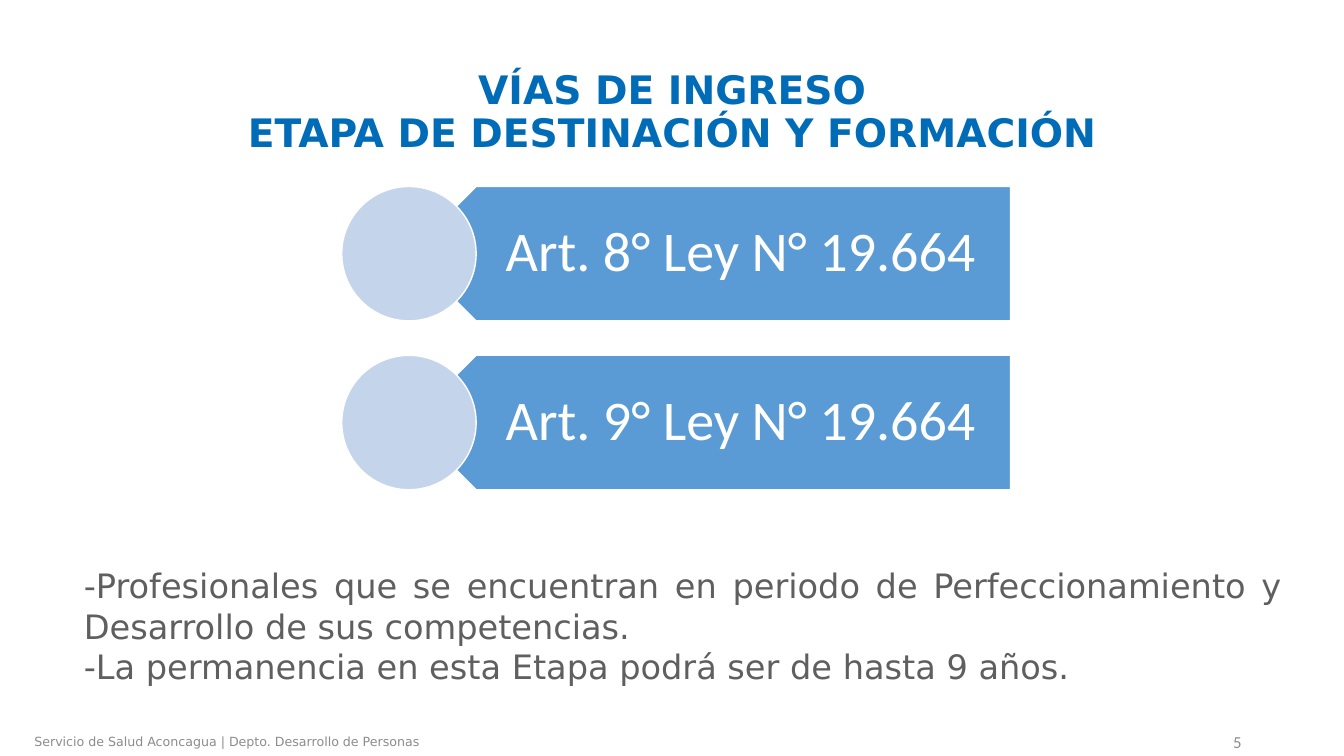
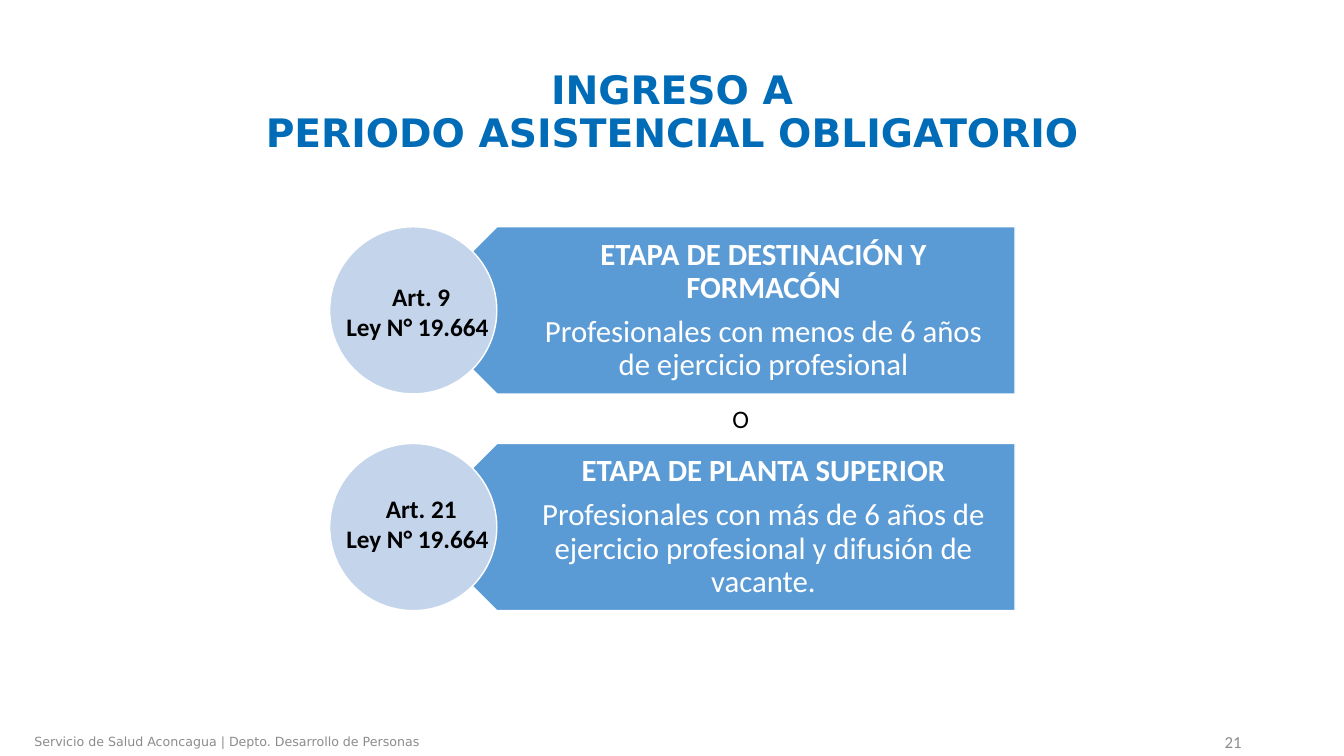
from pptx import Presentation
from pptx import util as u
from pptx.dml.color import RGBColor
from pptx.enum import shapes, text

# Colours and fonts
TITLE_BLUE = RGBColor(0x00, 0x6C, 0xB7)
PLATE_BLUE = RGBColor(0x5B, 0x9B, 0xD5)
CIRCLE_BLUE = RGBColor(0xC4, 0xD5, 0xEB)
FOOTER_GREY = RGBColor(0x8C, 0x8C, 0x8C)
BODY_GREY = RGBColor(0x5F, 0x5F, 0x5F)
WHITE = RGBColor(0xFF, 0xFF, 0xFF)
BLACK = RGBColor(0x00, 0x00, 0x00)
SANS, CALIBRI = "DejaVu Sans", "Calibri"

# Grid: 160 columns by 90 rows, square cells
CELL = u.Inches(1) / 12
COLS, ROWS = 160, 90
FOOTER = "Servicio de Salud Aconcagua | Depto. Desarrollo de Personas"
LEFT, CENTER, RIGHT, JUSTIFY = (text.PP_ALIGN.LEFT, text.PP_ALIGN.CENTER,
                                text.PP_ALIGN.RIGHT, text.PP_ALIGN.JUSTIFY)
MIDDLE, TOP = text.MSO_ANCHOR.MIDDLE, text.MSO_ANCHOR.TOP


def grid(*cells):
    return [u.Emu(round(c * CELL)) for c in cells]


class Deck:
    def __init__(self):
        self.prs = Presentation()
        self.prs.slide_width, self.prs.slide_height = grid(COLS, ROWS)
        self.s = None

    def slide(self, title, number):
        """Start a slide with its title and footer."""
        self.s = self.prs.slides.add_slide(self.prs.slide_layouts[5])
        sp = self.s.shapes.title
        sp.left, sp.top, sp.width, sp.height = grid(11, 4.8, 138, 17.4)
        self.fill_text(sp.text_frame, [title], 28, SANS, TITLE_BLUE,
                       bold=True, anchor=MIDDLE, spacing=0.9)
        self.label((0, 86.5, 54, 3.5), [FOOTER], 9, SANS, FOOTER_GREY, anchor=MIDDLE)
        self.label((113, 86.5, 36, 3.5), [number], 12, CALIBRI, FOOTER_GREY,
                   align=RIGHT, anchor=MIDDLE)

    def fill_text(self, tf, lines, size, font, color, bold=False, align=CENTER,
                  anchor=TOP, spacing=None, gap=0):
        tf.word_wrap = True
        tf.auto_size = text.MSO_AUTO_SIZE.NONE
        tf.vertical_anchor = anchor
        for i, line in enumerate(lines):
            p = tf.add_paragraph() if i else tf.paragraphs[0]
            p.text = line
            p.alignment = align
            p.line_spacing = spacing
            p.space_before = u.Pt(gap if i else 0)
            p.font.size, p.font.name, p.font.bold = u.Pt(size), font, bold
            p.font.color.rgb = color

    def label(self, box, lines, size, font, color, **style):
        tf = self.s.shapes.add_textbox(*grid(*box)).text_frame
        self.fill_text(tf, lines, size, font, color, **style)
        return tf

    def shape(self, kind, box, fill):
        sp = self.s.shapes.add_shape(kind, *grid(*box))
        sp.shadow.inherit = False
        sp.fill.solid()
        sp.fill.fore_color.rgb = fill
        sp.line.color.rgb = WHITE
        sp.line.width = u.Pt(1)
        return sp

    def plate(self, x, y, d, lines, size, pad_right, pad_y):
        """Left-pointing plate with a circle of diameter d over its tip."""
        width = 71.64
        plate_x = x + d / 2
        sp = self.shape(shapes.MSO_SHAPE.PENTAGON, (plate_x, y, width, d), PLATE_BLUE)
        sp.rotation = 180
        tf = self.label((plate_x + d / 4, y, width - d / 4, d), lines, size,
                        CALIBRI, WHITE, anchor=MIDDLE, spacing=0.9, gap=0.35 * size)
        tf.margin_left, tf.margin_right = grid(0.44 * d, pad_right)
        tf.margin_top = tf.margin_bottom = grid(pad_y)[0]
        self.shape(shapes.MSO_SHAPE.OVAL, (x, y, d, d), CIRCLE_BLUE)
        return tf


def entry_routes(deck):
    deck.slide("VÍAS DE INGRESO\vETAPA DE DESTINACIÓN Y FORMACIÓN", "5")
    for i, article in enumerate(("8°", "9°")):
        deck.plate(40.68, 22.2 + 20.1 * i, 16, [f"Art. {article} Ley N° 19.664"],
                   40, pad_right=3.7, pad_y=2)
    deck.label((8.8, 66.7, 145, 15.7), [
        "-Profesionales que se encuentran en periodo de Perfeccionamiento y "
        "Desarrollo de sus competencias.",
        "-La permanencia en esta Etapa podrá ser de hasta 9 años.",
    ], 24, SANS, BODY_GREY, align=JUSTIFY)


def mandatory_period(deck):
    deck.slide("INGRESO A\vPERIODO ASISTENCIAL OBLIGATORIO", "21")
    x, top, pitch = 39.25, 27, 25.8
    stages = [
        ("Art. 9", 5.9, "ETAPA DE DESTINACIÓN Y FORMACÓN",
         "Profesionales con menos de 6 años de ejercicio profesional"),
        ("Art. 21", 5.3, "ETAPA DE PLANTA SUPERIOR",
         "Profesionales con más de 6 años de ejercicio profesional "
         "y difusión de vacante."),
    ]
    for i, (article, drop, stage, who) in enumerate(stages):
        y = top + pitch * i
        tf = deck.plate(x, y, 19.9, [stage, who], 22, pad_right=2, pad_y=1.1)
        tf.paragraphs[0].font.bold = True
        # Law reference over the circle
        tf = deck.label((x + 0.8, y + drop, 20.2, 8.5), [article, "Ley N° 19.664"],
                        18, CALIBRI, BLACK, bold=True)
        tf.paragraphs[1].alignment = LEFT
    deck.label((82.7, 47.4, 11, 4.8), ["O"], 18, CALIBRI, BLACK)


def main():
    deck = Deck()
    entry_routes(deck)
    mandatory_period(deck)
    deck.prs.save("out.pptx")


if __name__ == "__main__":
    main()
